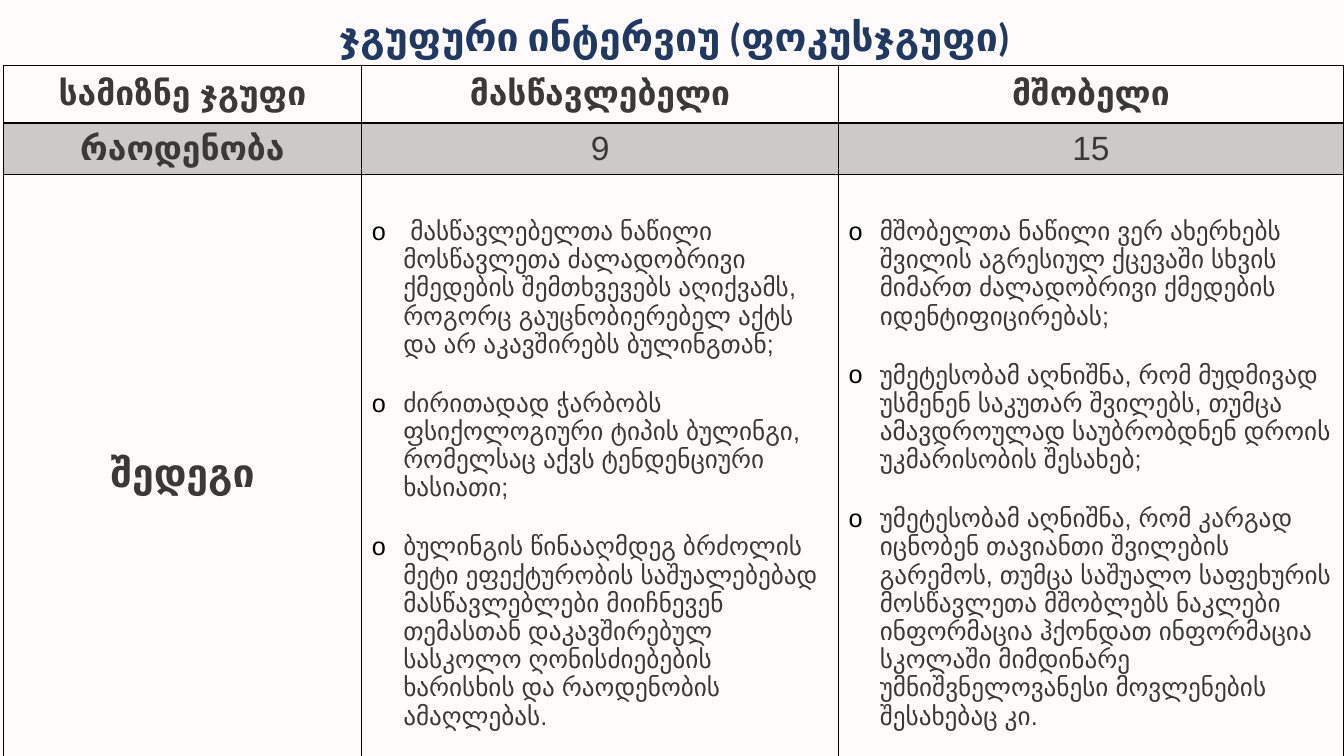
from dataclasses import dataclass

from lxml import etree
from pptx import Presentation
from pptx.dml.color import RGBColor
from pptx.enum.text import MSO_ANCHOR, MSO_AUTO_SIZE, PP_ALIGN
from pptx.oxml.ns import qn
from pptx.util import Cm, Pt

CENTER, LEFT = PP_ALIGN.CENTER, PP_ALIGN.LEFT
MIDDLE = MSO_ANCHOR.MIDDLE
NO_AUTOFIT = MSO_AUTO_SIZE.NONE

BACKGROUND = RGBColor(0xFF, 0xFC, 0xFB)
NAVY = RGBColor(0x20, 0x38, 0x64)
GRAY = RGBColor(0x3B, 0x38, 0x38)
BLACK = RGBColor(0, 0, 0)

TITLE_ONLY = 5
COLUMN_WIDTHS = (9.04, 12.01, 12.73)
ROW_HEIGHTS = (1.45, 1.3, 15.09)
BULLET_INDENT = Cm(0.79)
BULLET_GAP = Pt(22)


@dataclass
class CellSpec:
    paragraphs: tuple[str, ...]
    size: int = 24
    bold: bool = True
    bulleted: bool = False


TEACHER_RESULTS = (
    " მასწავლებელთა ნაწილი მოსწავლეთა ძალადობრივი ქმედების შემთხვევებს აღიქვამს, "
    "როგორც გაუცნობიერებელ აქტს და არ აკავშირებს ბულინგთან;",
    "ძირითადად ჭარბობს ფსიქოლოგიური ტიპის ბულინგი, რომელსაც აქვს ტენდენციური "
    "ხასიათი;",
    "ბულინგის წინააღმდეგ ბრძოლის მეტი ეფექტურობის საშუალებებად მასწავლებლები "
    "მიიჩნევენ თემასთან დაკავშირებულ სასკოლო ღონისძიებების ხარისხის და რაოდენობის "
    "ამაღლებას.",
)
PARENT_RESULTS = (
    "მშობელთა ნაწილი ვერ ახერხებს შვილის აგრესიულ ქცევაში სხვის მიმართ "
    "ძალადობრივი ქმედების იდენტიფიცირებას;",
    "უმეტესობამ აღნიშნა, რომ მუდმივად უსმენენ საკუთარ შვილებს, თუმცა "
    "ამავდროულად საუბრობდნენ დროის უკმარისობის შესახებ;",
    "უმეტესობამ აღნიშნა, რომ კარგად იცნობენ თავიანთი შვილების გარემოს, თუმცა "
    "საშუალო საფეხურის მოსწავლეთა მშობლებს ნაკლები ინფორმაცია ჰქონდათ ინფორმაცია "
    "სკოლაში მიმდინარე უმნიშვნელოვანესი მოვლენების შესახებაც კი.",
)
ROWS = (
    (CellSpec(("სამიზნე ჯგუფი",)), CellSpec(("მასწავლებელი",)), CellSpec(("მშობელი",))),
    (CellSpec(("რაოდენობა",)), CellSpec(("9",), bold=False), CellSpec(("15",), bold=False)),
    (
        CellSpec(("შედეგი",), size=28),
        CellSpec(TEACHER_RESULTS, 18, False, True),
        CellSpec(PARENT_RESULTS, 18, False, True),
    ),
)


def format_run(r, font: str, size: int, color: RGBColor, bold: bool) -> None:
    r.font.name = font
    r.font.size = Pt(size)
    r.font.color.rgb = color
    r.font.bold = bold


def add_bullet(p) -> None:
    pPr = p._p.get_or_add_pPr()
    pPr.set("marL", str(BULLET_INDENT))
    pPr.set("indent", str(-BULLET_INDENT))
    color = etree.SubElement(pPr, qn("a:buClr"))
    etree.SubElement(color, qn("a:srgbClr"), val=str(BLACK))
    etree.SubElement(pPr, qn("a:buFont"), typeface="Arial")
    etree.SubElement(pPr, qn("a:buChar"), char="o")


def set_borders(cell, widths: dict[str, int]) -> None:
    """Draw black borders; widths maps a side (L, R, T, B) to points."""
    tcPr = cell._tc.get_or_add_tcPr()
    for side, width in widths.items():
        ln = etree.SubElement(tcPr, qn(f"a:ln{side}"), w=str(Pt(width)))
        fill = etree.SubElement(ln, qn("a:solidFill"))
        etree.SubElement(fill, qn("a:srgbClr"), val=str(BLACK))


def shade(cell) -> None:
    """Fill the cell with black at 20 % opacity."""
    cell.fill.solid()
    cell.fill.fore_color.rgb = BLACK
    color = cell._tc.tcPr.find(qn("a:solidFill")).find(qn("a:srgbClr"))
    etree.SubElement(color, qn("a:alpha"), val="20000")


def write_cell(cell, spec: CellSpec) -> None:
    cell.vertical_anchor = MIDDLE
    tf = cell.text_frame
    tf.text = "\n".join(spec.paragraphs)
    for i, p in enumerate(tf.paragraphs):
        p.alignment = LEFT if spec.bulleted else CENTER
        if i:
            p.space_before = BULLET_GAP
        if spec.bulleted:
            add_bullet(p)
        for r in p.runs:
            format_run(r, "Arial", spec.size, GRAY, spec.bold)


def add_title(slide) -> None:
    sp = slide.shapes.title
    sp.left, sp.top, sp.width, sp.height = Cm(0.15), Cm(-0.3), Cm(33.7), Cm(2.57)
    tf = sp.text_frame
    tf.text = "ჯგუფური ინტერვიუ (ფოკუსჯგუფი)"
    tf.word_wrap = True
    tf.auto_size = NO_AUTOFIT
    tf.vertical_anchor = MIDDLE
    p = tf.paragraphs[0]
    p.alignment = CENTER
    p.line_spacing = 0.9
    format_run(p.runs[0], "Calibri", 28, NAVY, True)


def add_results_table(slide) -> None:
    table = slide.shapes.add_table(
        len(ROWS), len(COLUMN_WIDTHS), Cm(0.08), Cm(1.65),
        Cm(sum(COLUMN_WIDTHS)), Cm(sum(ROW_HEIGHTS)),
    ).table
    table.first_row = False
    table.horz_banding = False
    for column, width in zip(table.columns, COLUMN_WIDTHS):
        column.width = Cm(width)
    for i, (row, height, specs) in enumerate(zip(table.rows, ROW_HEIGHTS, ROWS)):
        row.height = Cm(height)
        for cell, spec in zip(row.cells, specs):
            write_cell(cell, spec)
            set_borders(cell, {"L": 1, "R": 1, "T": 2 if i == 1 else 1, "B": 2 if i == 0 else 1})
            if i == 1:
                shade(cell)
            else:
                cell.fill.background()


def main() -> None:
    prs = Presentation()
    prs.slide_width, prs.slide_height = Cm(33.87), Cm(19.05)
    slide = prs.slides.add_slide(prs.slide_layouts[TITLE_ONLY])
    slide.background.fill.solid()
    slide.background.fill.fore_color.rgb = BACKGROUND
    add_title(slide)
    add_results_table(slide)
    prs.save("out.pptx")


if __name__ == "__main__":
    main()
